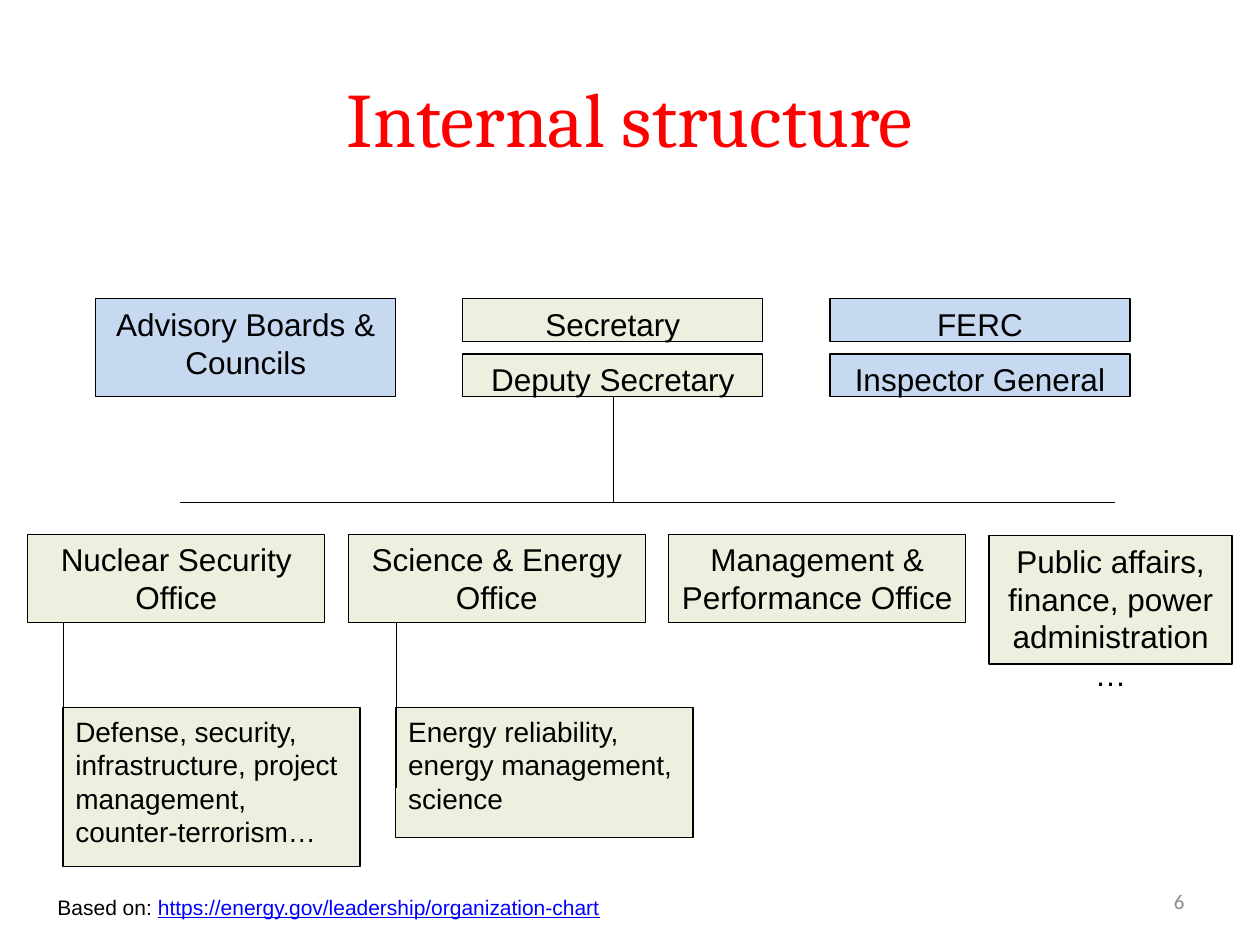
from lxml import etree
from pptx import Presentation
from pptx.dml.color import RGBColor
from pptx.enum import shapes, text
from pptx.oxml.ns import qn
from pptx.util import Cm, Pt

GREEN, BLUE, BLACK = "EBF1DE", "C6D9F1", "000000"
LEFT, CENTER, RIGHT = text.PP_ALIGN.LEFT, text.PP_ALIGN.CENTER, text.PP_ALIGN.RIGHT


def rgb(value):
    return RGBColor.from_string(value)


def style(run, size, color=BLACK, font="Arial"):
    run.font.name = font
    run.font.size = Pt(size)
    run.font.color.rgb = rgb(color)


def add_unit(slide, label, left, top, width, height, fill=GREEN, size=18, align=CENTER):
    unit = slide.shapes.add_shape(shapes.MSO_SHAPE.RECTANGLE,
                                  Cm(left), Cm(top), Cm(width), Cm(height))
    unit.shadow.inherit = False
    unit.fill.solid()
    unit.fill.fore_color.rgb = rgb(fill)
    unit.line.color.rgb = rgb(BLACK)
    unit.line.width = Pt(0.75)
    frame = unit.text_frame
    frame.word_wrap = True
    frame.vertical_anchor = text.MSO_ANCHOR.TOP
    frame.text = label
    frame.paragraphs[0].alignment = align
    style(frame.paragraphs[0].runs[0], size)
    return unit


def add_line(slide, x1, y1, x2, y2):
    line = slide.shapes.add_connector(shapes.MSO_CONNECTOR.STRAIGHT,
                                      Cm(x1), Cm(y1), Cm(x2), Cm(y2))
    line.line.color.rgb = rgb(BLACK)
    line.line.width = Pt(0.25)
    etree.SubElement(line._element.spPr, qn("a:effectLst"))
    return line


def add_title(slide, left, top, width, height):
    title = slide.shapes.title
    title.left, title.top, title.width, title.height = map(Cm, (left, top, width, height))
    title.text_frame.text = "Internal structure"
    title.text_frame.vertical_anchor = text.MSO_ANCHOR.MIDDLE
    title.text_frame.paragraphs[0].alignment = CENTER
    style(title.text_frame.paragraphs[0].runs[0], 44, "FF0000", "Cambria")


def add_leadership(slide, left, top, width, height):
    """Three columns; returns the box of the deputy secretary."""
    unit_width, unit_height = 6.05, 0.86
    step = (width - unit_width) / 2
    lower = top + height - unit_height
    middle, last = left + step, left + 2 * step
    add_unit(slide, "Advisory Boards & Councils", left, top, unit_width, height, BLUE)
    add_unit(slide, "Secretary", middle, top, unit_width, unit_height)
    deputy = add_unit(slide, "Deputy Secretary", middle, lower, unit_width, unit_height)
    add_unit(slide, "FERC", last, top, unit_width, unit_height, BLUE)
    add_unit(slide, "Inspector General", last, lower, unit_width, unit_height, BLUE)
    return deputy


def add_bus(slide, deputy, left, top, width):
    center = (deputy.left + deputy.width / 2) / Cm(1)
    stem = add_line(slide, center, top - 2.13, center, top)
    stem.begin_connect(deputy, 2)
    add_line(slide, left, top, left + width, top)


def add_offices(slide, left, top):
    step, width, height = 6.46, 5.99, 1.78
    names = ["Nuclear Security Office", "Science & Energy Office",
             "Management & Performance Office"]
    for i, name in enumerate(names):
        add_unit(slide, name, left + i * step, top, width, height)
    add_unit(slide, "Public affairs, finance, power administration…",
             left + len(names) * step, top + 0.03, 4.9, 2.59)

    # Duties hang below the first two offices
    duties = [
        ("Defense, security, infrastructure, project management, counter-terrorism…", 3.2),
        ("Energy reliability, energy management, science", 2.62),
    ]
    for i, (duty, duty_height) in enumerate(duties):
        x = left + 0.71 + i * 6.71
        add_unit(slide, duty, x, top + 3.5, width, duty_height, size=16, align=LEFT)
        add_line(slide, x, top + height, x, top + 5.11)


def add_note(slide, parts, left, top, width, height, align=LEFT,
             anchor=text.MSO_ANCHOR.TOP, font="Arial"):
    note = slide.shapes.add_textbox(Cm(left), Cm(top), Cm(width), Cm(height))
    note.text_frame.word_wrap = True
    note.text_frame.vertical_anchor = anchor
    line = note.text_frame.paragraphs[0]
    line.alignment = align
    for words, color in parts:
        run = line.add_run()
        run.text = words
        style(run, 12, color, font)
    return line


def main():
    deck = Presentation()
    deck.slide_width, deck.slide_height = Cm(25.4), Cm(19.05)
    slide = deck.slides.add_slide(deck.slide_layouts[5])

    add_title(slide, 1.27, 0.76, 22.86, 3.18)

    # Organization chart
    deputy = add_leadership(slide, 1.93, 6.02, 20.85, 1.98)
    add_bus(slide, deputy, 3.63, 10.13, 18.85)
    add_offices(slide, 0.56, 10.77)

    # Page number and source
    add_note(slide, [("6", "8C8C8C")], 18.21, 17.65, 5.92, 1.02,
             RIGHT, text.MSO_ANCHOR.MIDDLE, "Calibri")
    source = add_note(slide, [("Based on: ", BLACK),
                              ("https://energy.gov/leadership/organization-chart", "0000FF")],
                      0.91, 17.91, 12.7, 0.76)
    source.runs[1].font.underline = True

    deck.save("out.pptx")


if __name__ == "__main__":
    main()
